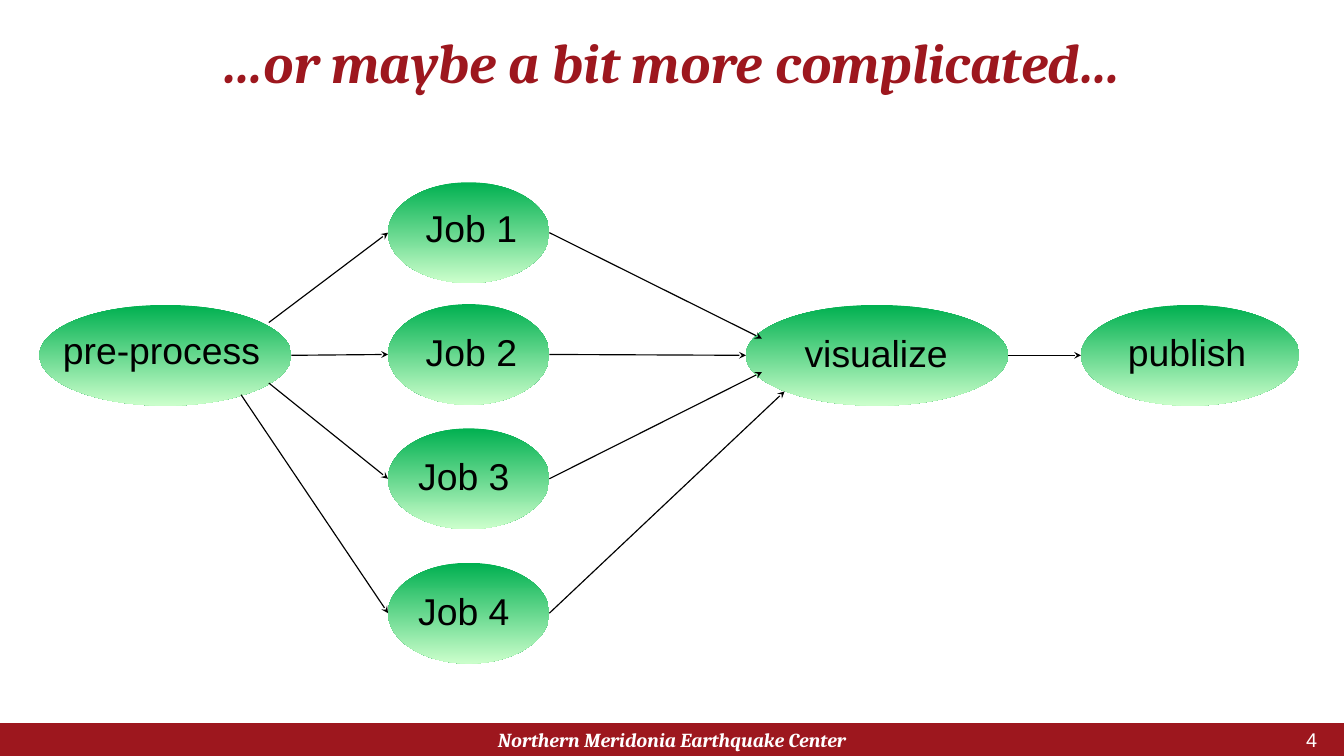
from pptx import Presentation
from pptx.dml.color import RGBColor
from pptx.enum import shapes, text
from pptx.oxml.ns import qn
from pptx.util import Inches, Pt
from lxml import etree

COLORS = {"red": "9D171E", "green": "00B050", "pale": "CCFFCC",
          "black": "000000", "white": "FFFFFF"}
NODE_H = 1.2
MID = 2.06  # height of the main row's centre line within the diagram

# name: left, top, width, label offset x, label offset y, label width
NODES = {
    "pre-process": (0, 1.46, 3, 0.18, 0.21, 2.67),
    "Job 1": (4.15, 0, 1.92, 0.35, 0.22, 1.87),
    "Job 2": (4.15, 1.45, 1.92, 0.35, 0.25, 1.87),
    "Job 3": (4.15, 2.93, 1.92, 0.26, 0.25, 1.87),
    "Job 4": (4.15, 4.53, 1.92, 0.26, 0.25, 1.87),
    "visualize": (8.41, 1.46, 3.12, 0.6, 0.25, 2.93),
    "publish": (12.4, 1.46, 2.6, 0.46, 0.24, 2.33),
}
# job: where its arrow leaves pre-process, where its arrow meets visualize
JOB_LINKS = {
    "Job 1": ((2.73, 1.67), (8.6, 1.86)),
    "Job 2": ((3, MID), (8.41, MID)),
    "Job 3": ((2.73, 2.39), (8.6, 2.26)),
    "Job 4": ((2.4, 2.53), (8.87, 2.49)),
}


def rgb(name):
    return RGBColor.from_string(COLORS[name])


def write(sp, words, size, font, color, align=text.PP_ALIGN.LEFT,
          anchor=text.MSO_ANCHOR.TOP, strong=False, inset=(0.1, 0.05)):
    tf = sp.text_frame
    tf.text = words
    tf.word_wrap = True
    tf.auto_size = text.MSO_AUTO_SIZE.NONE
    tf.vertical_anchor = anchor
    tf.margin_left = tf.margin_right = Inches(inset[0])
    tf.margin_top = tf.margin_bottom = Inches(inset[1])
    p = tf.paragraphs[0]
    p.alignment = align
    f = p.runs[0].font
    f.size, f.name, f.bold, f.italic = Pt(size), font, strong, strong
    f.color.rgb = rgb(color)
    return p


def add_shape(s, kind, box):
    sp = s.shapes.add_shape(kind, *map(Inches, box))
    sp.shadow.inherit = False
    sp.line.fill.background()
    return sp


def add_arrow(s, start, end):
    c = s.shapes.add_connector(shapes.MSO_CONNECTOR.STRAIGHT,
                               *map(Inches, (*start, *end)))
    c.line.color.rgb = rgb("black")
    c.line.width = Pt(1)
    tail = etree.SubElement(c.line._get_or_add_ln(), qn("a:tailEnd"))
    tail.set("type", "stealth")
    etree.SubElement(c._element.spPr, qn("a:effectLst"))


def add_title(s, box):
    t = s.shapes.title
    t.left, t.top, t.width, t.height = map(Inches, box)
    p = write(t, "…or maybe a bit more complicated…", 47.7, "Cambria", "red",
              text.PP_ALIGN.CENTER, strong=True, inset=(0.12, 0.06))
    p.line_spacing = 0.9


def add_node(s, name, x, y):
    left, top, width, dx, dy, label_w = NODES[name]
    sp = add_shape(s, shapes.MSO_SHAPE.OVAL, (x + left, y + top, width, NODE_H))
    sp.fill.gradient()
    sp.fill.gradient_angle = 270
    for stop, color, pos in zip(sp.fill.gradient_stops, ("green", "pale"), (0, 1)):
        stop.color.rgb = rgb(color)
        stop.position = pos
    label = s.shapes.add_textbox(*map(Inches, (x + left + dx, y + top + dy,
                                               label_w, 0.64)))
    write(label, name, 32, "Arial", "black")


def add_workflow(s, box):
    x, y = box[:2]
    for name in NODES:
        add_node(s, name, x, y)
    # Fan out to the jobs, then back in
    for job, (start, end) in JOB_LINKS.items():
        left, top, width = NODES[job][:3]
        mid = y + top + NODE_H / 2
        add_arrow(s, (x + start[0], y + start[1]), (x + left, mid))
        add_arrow(s, (x + left + width, mid), (x + end[0], y + end[1]))
    # Last step
    left, _, width = NODES["visualize"][:3]
    add_arrow(s, (x + left + width, y + MID), (x + NODES["publish"][0], y + MID))


def add_footer(s, box):
    x, y, w, _ = box
    bar = add_shape(s, shapes.MSO_SHAPE.RECTANGLE, box)
    bar.fill.solid()
    bar.fill.fore_color.rgb = rgb("red")
    center = s.shapes.add_textbox(*map(Inches, (x + (w - 5.4) / 2, y - 0.04, 5.4, 0.48)))
    write(center, "Northern Meridonia Earthquake Center", 17, "Cambria", "white",
          text.PP_ALIGN.CENTER, text.MSO_ANCHOR.MIDDLE, True, (0.12, 0.06))
    number = s.shapes.add_textbox(*map(Inches, (x + w - 1.7, y + 0.08, 1.5, 0.24)))
    write(number, "4", 17, "Arial", "white", text.PP_ALIGN.RIGHT,
          text.MSO_ANCHOR.MIDDLE, inset=(0.12, 0.06))


def main():
    prs = Presentation()
    prs.slide_width, prs.slide_height = Inches(16), Inches(9)
    s = prs.slides.add_slide(prs.slide_layouts[5])
    add_footer(s, (0, 8.61, 16, 0.39))
    add_title(s, (0.4, 0.36, 15.2, 0.84))
    add_workflow(s, (0.47, 2.17, 15, 5.73))
    prs.save("out.pptx")


if __name__ == "__main__":
    main()
